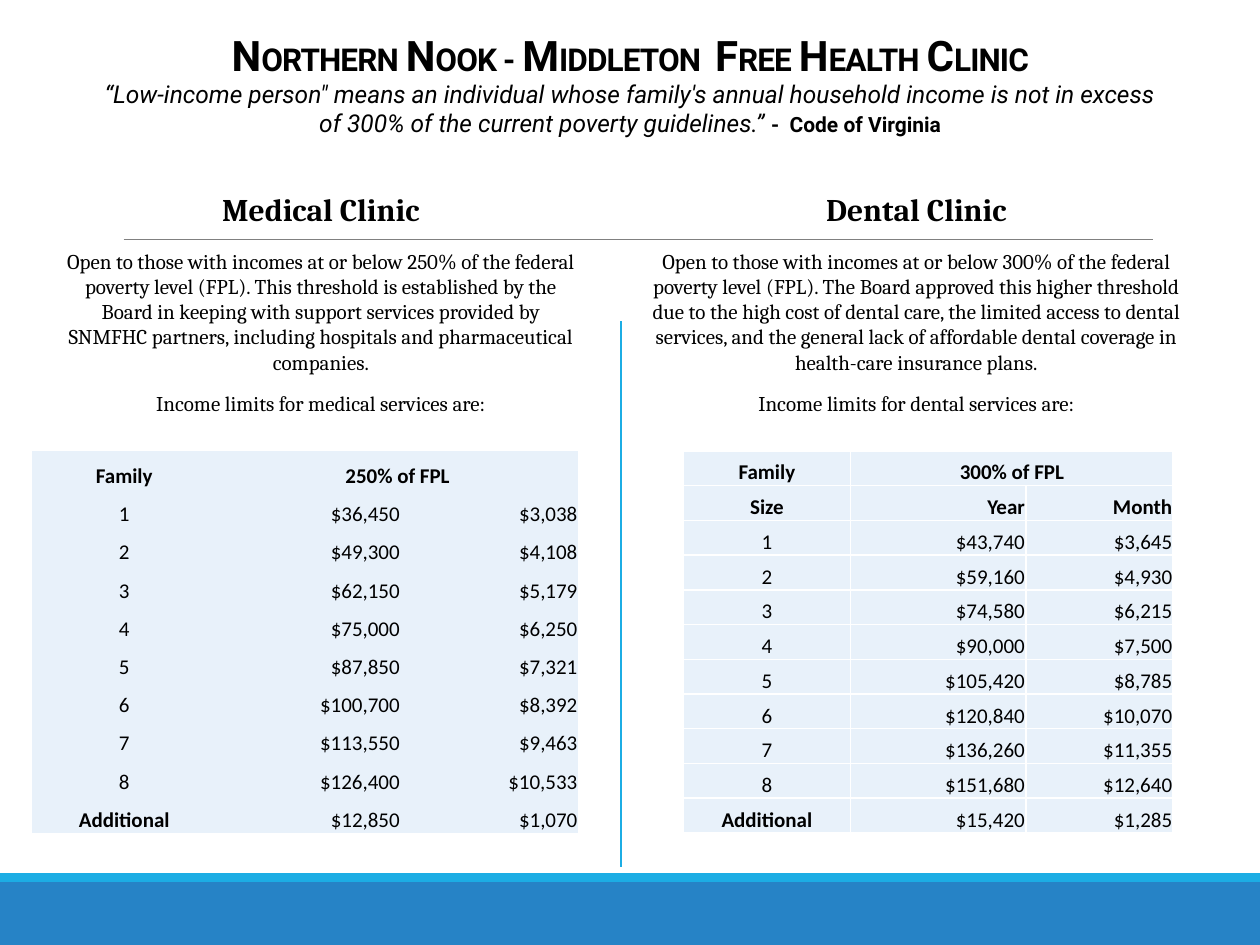
from lxml import etree
from pptx import Presentation
from pptx.dml.color import RGBColor
from pptx.enum.shapes import MSO_CONNECTOR, MSO_SHAPE
from pptx.enum.text import MSO_ANCHOR, MSO_AUTO_SIZE, PP_ALIGN
from pptx.oxml.ns import qn
from pptx.util import Cm, Pt

CENTER, RIGHT = PP_ALIGN.CENTER, PP_ALIGN.RIGHT
BOTTOM = MSO_ANCHOR.BOTTOM
NO_AUTOFIT = MSO_AUTO_SIZE.NONE
RECTANGLE = MSO_SHAPE.RECTANGLE
STRAIGHT = MSO_CONNECTOR.STRAIGHT

BLACK = RGBColor(0x00, 0x00, 0x00)
WHITE = RGBColor(0xFF, 0xFF, 0xFF)
GRAY = RGBColor(0x80, 0x80, 0x80)
BLUE = RGBColor(0x26, 0x83, 0xC6)
CYAN = RGBColor(0x1C, 0xAD, 0xE4)
PALE_BLUE = RGBColor(0xE8, 0xF1, 0xFA)

PAGE_WIDTH, PAGE_HEIGHT = 25.4, 19.05
PLAIN_TABLE_STYLE = "{2D5ABB26-0587-4C30-8999-92F81FD0307C}"

TITLE_RUNS = [
    ("N", 24), ("ORTHERN ", 18), ("N", 24), ("OOK - ", 18),
    ("M", 24), ("IDDLETON", 18), (" ", 32), ("F", 24), ("REE ", 18),
    ("H", 24), ("EALTH ", 18), ("C", 24), ("LINIC", 18),
]
FAMILY_SIZES = ["1", "2", "3", "4", "5", "6", "7", "8", "Additional"]

MEDICAL = {
    "heading": "Medical Clinic",
    "rule": "Open to those with incomes at or below 250% of the federal poverty "
            "level (FPL). This threshold is established by the Board in keeping "
            "with support services provided by SNMFHC partners, including "
            "hospitals and pharmaceutical companies.",
    "lead": "Income limits for medical services are:",
    "headers": [("Family", "250% of FPL", "")],
    "years": ["$36,450", "$49,300", "$62,150", "$75,000", "$87,850",
              "$100,700", "$113,550", "$126,400", "$12,850"],
    "months": ["$3,038", "$4,108", "$5,179", "$6,250", "$7,321",
               "$8,392", "$9,463", "$10,533", "$1,070"],
    "columns": [3.73, 3.71, 3.58],
    "table_indent": -0.43,
    "border": None,
}
DENTAL = {
    "heading": "Dental Clinic",
    "rule": "Open to those with incomes at or below 300% of the federal poverty "
            "level (FPL). The Board approved this higher threshold due to the "
            "high cost of dental care, the limited access to dental services, "
            "and the general lack of affordable dental coverage in health-care "
            "insurance plans.",
    "lead": "Income limits for dental services are:",
    "headers": [("Family", "300% of FPL", ""), ("Size", "Year", "Month")],
    "years": ["$43,740", "$59,160", "$74,580", "$90,000", "$105,420",
              "$120,840", "$136,260", "$151,680", "$15,420"],
    "months": ["$3,645", "$4,930", "$6,215", "$7,500", "$8,785",
               "$10,070", "$11,355", "$12,640", "$1,285"],
    "columns": [3.38, 3.53, 2.97],
    "table_indent": 0.87,
    "border": WHITE,
}


def add_run(para, text, font, size, bold=False, italic=False):
    span = para.add_run()
    span.text = text
    span.font.name = font
    span.font.size = Pt(size)
    span.font.bold = bold
    span.font.italic = italic
    span.font.color.rgb = BLACK
    return span


def add_text_box(page, left, top, width, height, para_count=1):
    """Add a wrapping box and return its centred, empty paragraphs."""
    frame = page.shapes.add_textbox(Cm(left), Cm(top), Cm(width), Cm(height)).text_frame
    frame.word_wrap = True
    for _ in range(para_count - 1):
        frame.add_paragraph()
    for para in frame.paragraphs:
        para.alignment = CENTER
    return frame.paragraphs


def add_band(page, top, height, color):
    band = page.shapes.add_shape(RECTANGLE, 0, Cm(top), Cm(PAGE_WIDTH), Cm(height))
    band.shadow.inherit = False
    band.fill.solid()
    band.fill.fore_color.rgb = color
    band.line.fill.background()


def add_line(page, start, end, color, weight):
    line = page.shapes.add_connector(STRAIGHT, *map(Cm, start + end))
    line.line.color.rgb = color
    line.line.width = Pt(weight)
    etree.SubElement(line.element.spPr, qn("a:effectLst"))


def add_cell_borders(cell, color):
    properties = cell._tc.get_or_add_tcPr()
    for edge in ("a:lnL", "a:lnR", "a:lnT", "a:lnB"):
        border = etree.SubElement(properties, qn(edge), w=str(Pt(1)))
        fill = etree.SubElement(border, qn("a:solidFill"))
        etree.SubElement(fill, qn("a:srgbClr"), val=str(color))


def format_cell(cell, text, alignment, bold, border):
    if border is not None:
        add_cell_borders(cell, border)
    cell.fill.solid()
    cell.fill.fore_color.rgb = PALE_BLUE
    cell.vertical_anchor = BOTTOM
    cell.margin_left = cell.margin_right = cell.margin_top = Cm(0.02)
    cell.margin_bottom = 0
    para = cell.text_frame.paragraphs[0]
    para.alignment = alignment
    if text:
        add_run(para, text, "Calibri", 12, bold)


def add_income_table(page, left, top, height, clinic):
    headers = clinic["headers"]
    rows = headers + list(zip(FAMILY_SIZES, clinic["years"], clinic["months"]))
    frame = page.shapes.add_table(len(rows), 3, Cm(left), Cm(top),
                                  Cm(sum(clinic["columns"])), Cm(height))
    for style in frame.element.iter(qn("a:tableStyleId")):
        style.text = PLAIN_TABLE_STYLE
    table = frame.table
    table.first_row = table.horz_banding = False
    for column, width in zip(table.columns, clinic["columns"]):
        column.width = Cm(width)
    for row_index, values in enumerate(rows):
        table.rows[row_index].height = Cm(height / len(rows))
        for column_index, text in enumerate(values):
            centered = row_index == 0 or column_index == 0
            bold = row_index < len(headers) or text == "Additional"
            format_cell(table.cell(row_index, column_index), text,
                        CENTER if centered else RIGHT, bold, clinic["border"])
    table.cell(0, 1).merge(table.cell(0, 2))


def add_clinic(page, left, top, width, clinic):
    heading_indent = 0.6
    heading, = add_text_box(page, left + heading_indent, top,
                            width - 2 * heading_indent, 1.02)
    add_run(heading, clinic["heading"], "Cambria", 18, bold=True)
    rule, lead = add_text_box(page, left, top + 1.17, width, 3.68, 2)
    add_run(rule, clinic["rule"], "Cambria", 12)
    add_run(lead, clinic["lead"], "Cambria", 12)
    lead.space_before = Pt(9.5)
    add_income_table(page, left + clinic["table_indent"], top + 5.38, 7.7, clinic)


def add_header(page, left, top, width):
    title = page.shapes.title
    title.left, title.top, title.width, title.height = map(Cm, (left, top, width, 2.36))
    frame = title.text_frame
    frame.auto_size = NO_AUTOFIT
    frame.vertical_anchor = BOTTOM
    frame.margin_bottom = Cm(0.69)
    para = frame.paragraphs[0]
    para.alignment = CENTER
    para.line_spacing = 0.85
    for text, size in TITLE_RUNS:
        span = add_run(para, text, "Roboto", size, bold=True)
        span.font._element.set("spc", "-50")

    first, second = add_text_box(page, left - 0.21, top + 1.47, width + 0.42, 1.45, 2)
    add_run(first, "“Low-income person\" means an individual whose family's annual "
                   "household income is not in excess", "Roboto", 14, italic=True)
    add_run(second, "of 300% of the current poverty guidelines.” ", "Roboto", 14, italic=True)
    add_run(second, "-  Code of Virginia", "Roboto", 12, bold=True)


def main():
    deck = Presentation()
    deck.slide_width, deck.slide_height = Cm(PAGE_WIDTH), Cm(PAGE_HEIGHT)
    page = deck.slides.add_slide(deck.slide_layouts[5])
    add_band(page, 17.78, 1.27, BLUE)
    add_band(page, 17.6, 0.18, CYAN)
    add_line(page, (2.49, 4.83), (23.24, 4.83), GRAY, 0.5)
    add_header(page, 0.64, 0, 24.13)
    add_clinic(page, 1.07, 3.71, 10.8, MEDICAL)
    add_clinic(page, 12.9, 3.71, 11.15, DENTAL)
    add_line(page, (12.52, 6.48), (12.52, 17.48), CYAN, 1)
    deck.save("out.pptx")


if __name__ == "__main__":
    main()
